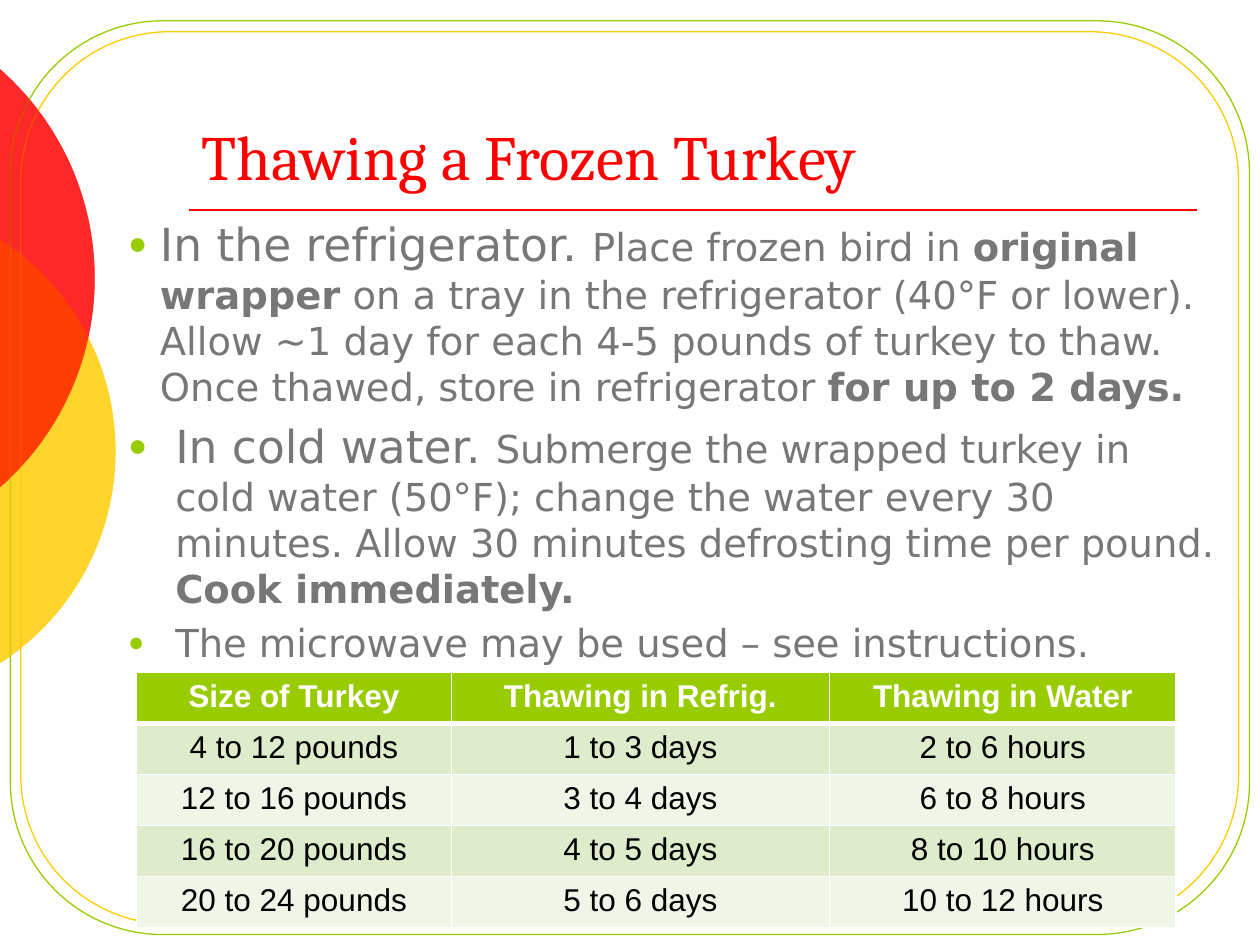
from math import acos, cos, sin, tan

from lxml.etree import SubElement
from pptx import Presentation
from pptx.dml.color import RGBColor
from pptx.enum.shapes import MSO_CONNECTOR, MSO_SHAPE
from pptx.enum.text import MSO_ANCHOR, MSO_AUTO_SIZE, PP_ALIGN
from pptx.oxml import parse_xml
from pptx.oxml.ns import nsdecls, qn
from pptx.util import Cm, Pt

GREEN, YELLOW, RED, GREY, WHITE, BLACK = "99CC00", "FFCC00", "FF0000", "777777", "FFFFFF", "000000"


def color(value):
    return RGBColor.from_string(value)


class SlideBuilder:
    title_font = "Cambria"
    body_font = "DejaVu Sans"
    table_font = "Arial"
    band_fills = ("DEECCC", "EFF6E7")

    def __init__(self, presentation):
        self.slide = presentation.slides.add_slide(presentation.slide_layouts[1])
        self.shapes = self.slide.shapes

    def add_run(self, paragraph, text, font_name, size, fill, bold=False):
        run = paragraph.add_run()
        run.text = text
        run.font.name = font_name
        run.font.size = Pt(size)
        run.font.bold = bold
        run.font.color.rgb = color(fill)

    def place(self, shape, left, top, width, height):
        shape.left, shape.top = Cm(left), Cm(top)
        shape.width, shape.height = Cm(width), Cm(height)
        self.shapes._spTree.append(shape._element)

    def add_edge_circle(self, left, top, radius, fill, opacity):
        diameter = 2 * radius
        builder = self.shapes.build_freeform(Cm(left), Cm(top))
        builder.add_line_segments([(Cm(left + diameter), Cm(top + diameter))], close=True)
        shape = builder.convert_to_shape()
        shape.shadow.inherit = False
        shape.line.fill.background()
        shape.fill.solid()
        shape.fill.fore_color.rgb = color(fill)
        fill_element = shape._element.spPr.find(".//" + qn("a:srgbClr"))
        SubElement(fill_element, qn("a:alpha"), val=str(opacity * 1000))
        self.curve_outline(shape, left, radius)

    def curve_outline(self, shape, left, radius):
        limit = acos(-(left + radius) / radius)
        handle = radius * 4 / 3 * tan(limit / 4)
        edge, rise = radius + radius * cos(limit), radius * sin(limit)
        handle_x, handle_y = edge + handle * sin(limit), rise - handle * cos(limit)
        right = 2 * radius
        commands = [
            ("moveTo", [(edge, -rise)]),
            ("cubicBezTo", [(handle_x, -handle_y), (right, -handle), (right, 0)]),
            ("cubicBezTo", [(right, handle), (handle_x, handle_y), (edge, rise)]),
            ("close", []),
        ]
        outline = shape._element.spPr.find(".//" + qn("a:path"))
        for child in list(outline):
            outline.remove(child)
        for name, points in commands:
            command = SubElement(outline, qn("a:" + name))
            for x, y in points:
                SubElement(command, qn("a:pt"), x=str(Cm(x)), y=str(Cm(radius + y)))

    def add_frame(self, left, top, width, height, line):
        shape = self.shapes.add_shape(MSO_SHAPE.ROUNDED_RECTANGLE, Cm(left), Cm(top), Cm(width), Cm(height))
        shape.shadow.inherit = False
        shape.fill.background()
        shape.line.color.rgb = color(line)
        shape.line.width = Pt(0.75)

    def add_rule(self, left, right, top, line):
        connector = self.shapes.add_connector(MSO_CONNECTOR.STRAIGHT, Cm(left), Cm(top), Cm(right), Cm(top))
        connector.line.color.rgb = color(line)
        connector.line.width = Pt(1)
        SubElement(connector._element.spPr, qn("a:effectLst"))

    def add_title(self, text, *box):
        title = self.shapes.title
        self.place(title, *box)
        frame = title.text_frame
        frame.auto_size = MSO_AUTO_SIZE.NONE
        frame.vertical_anchor = MSO_ANCHOR.BOTTOM
        paragraph = frame.paragraphs[0]
        paragraph.alignment = PP_ALIGN.LEFT
        self.add_run(paragraph, text, self.title_font, 36, RED)

    def add_bullets(self, items, *box):
        body = self.slide.placeholders[1]
        self.place(body, *box)
        frame = body.text_frame
        frame.auto_size = MSO_AUTO_SIZE.NONE
        for index, (indent, runs) in enumerate(items):
            paragraph = frame.paragraphs[0] if index == 0 else frame.add_paragraph()
            properties = paragraph._p.get_or_add_pPr()
            properties.set("marL", str(Cm(indent)))
            properties.set("indent", str(-Cm(indent)))
            bullet_color = SubElement(properties, qn("a:buClr"))
            SubElement(bullet_color, qn("a:srgbClr"), val=GREEN)
            SubElement(properties, qn("a:buSzPct"), val="70000")
            SubElement(properties, qn("a:buChar"), char="●")
            for text, size, bold in runs:
                self.add_run(paragraph, text, self.body_font, size, GREY, bold)

    def set_borders(self, cell, bottom_width):
        properties = cell._tc.get_or_add_tcPr()
        widths = {"lnL": 1, "lnR": 1, "lnT": 1, "lnB": bottom_width}
        for index, (side, width) in enumerate(widths.items()):
            properties.insert(index, parse_xml(
                f'<a:{side} {nsdecls("a")} w="{Pt(width)}"><a:solidFill>'
                f'<a:srgbClr val="{WHITE}"/></a:solidFill></a:{side}>'))

    def add_table(self, rows, left, top, column_widths, row_height):
        table = self.shapes.add_table(
            len(rows), len(column_widths), Cm(left), Cm(top),
            Cm(sum(column_widths)), Cm(row_height * len(rows))).table
        for column, width in zip(table.columns, column_widths):
            column.width = Cm(width)
        for row_index, texts in enumerate(rows):
            header = row_index == 0
            for column_index, text in enumerate(texts):
                cell = table.cell(row_index, column_index)
                cell.fill.solid()
                cell.fill.fore_color.rgb = color(GREEN if header else self.band_fills[(row_index - 1) % 2])
                self.set_borders(cell, 3 if header else 1)
                paragraph = cell.text_frame.paragraphs[0]
                paragraph.alignment = PP_ALIGN.CENTER
                self.add_run(paragraph, text, self.table_font, 18, WHITE if header else BLACK, header)


def add_circles(builder):
    builder.add_edge_circle(-7.83, 4.02, 5.08, YELLOW, 58)
    builder.add_edge_circle(-9.31, 0, 5.61, RED, 60)


def main():
    presentation = Presentation()
    presentation.slide_width, presentation.slide_height = Cm(25.4), Cm(19.05)
    builder = SlideBuilder(presentation)
    add_circles(builder)
    builder.add_frame(0.21, 0.42, 24.98, 18.42, GREEN)
    builder.add_frame(0.42, 0.64, 24.55, 17.99, YELLOW)
    builder.add_rule(3.81, 24.13, 4.23, RED)
    add_circles(builder)
    builder.add_title("Thawing a Frozen Turkey", 3.81, 0.85, 20.32, 3.18)
    builder.add_bullets([
        (0.64, [
            ("In the refrigerator. ", 26, False),
            ("Place frozen bird in ", 22, False),
            ("original wrapper", 22, True),
            (" on a tray in the refrigerator (40°F or lower). Allow ~1 day for each 4-5 pounds "
             "of turkey to thaw. Once thawed, store in refrigerator ", 22, False),
            ("for up to 2 days.", 22, True),
        ]),
        (0.95, [
            ("In cold water. ", 26, False),
            ("Submerge the wrapped turkey in cold water (50°F); change the water every 30 "
             "minutes. Allow 30 minutes defrosting time per pound. ", 22, False),
            ("Cook immediately.", 22, True),
        ]),
        (0.95, [("The microwave may be used – see instructions.", 22, False)]),
    ], 2.33, 4.23, 22.44, 11.43)
    builder.add_table([
        ("Size of Turkey", "Thawing in Refrig.", "Thawing in Water"),
        ("4 to 12 pounds", "1 to 3 days", "2 to 6 hours"),
        ("12 to 16 pounds", "3 to 4 days", "6 to 8 hours"),
        ("16 to 20 pounds", "4 to 5 days", "8 to 10 hours"),
        ("20 to 24 pounds", "5 to 6 days", "10 to 12 hours"),
    ], 2.75, 13.55, (6.35, 7.62, 6.99), 1.03)
    presentation.save("out.pptx")


if __name__ == "__main__":
    main()
